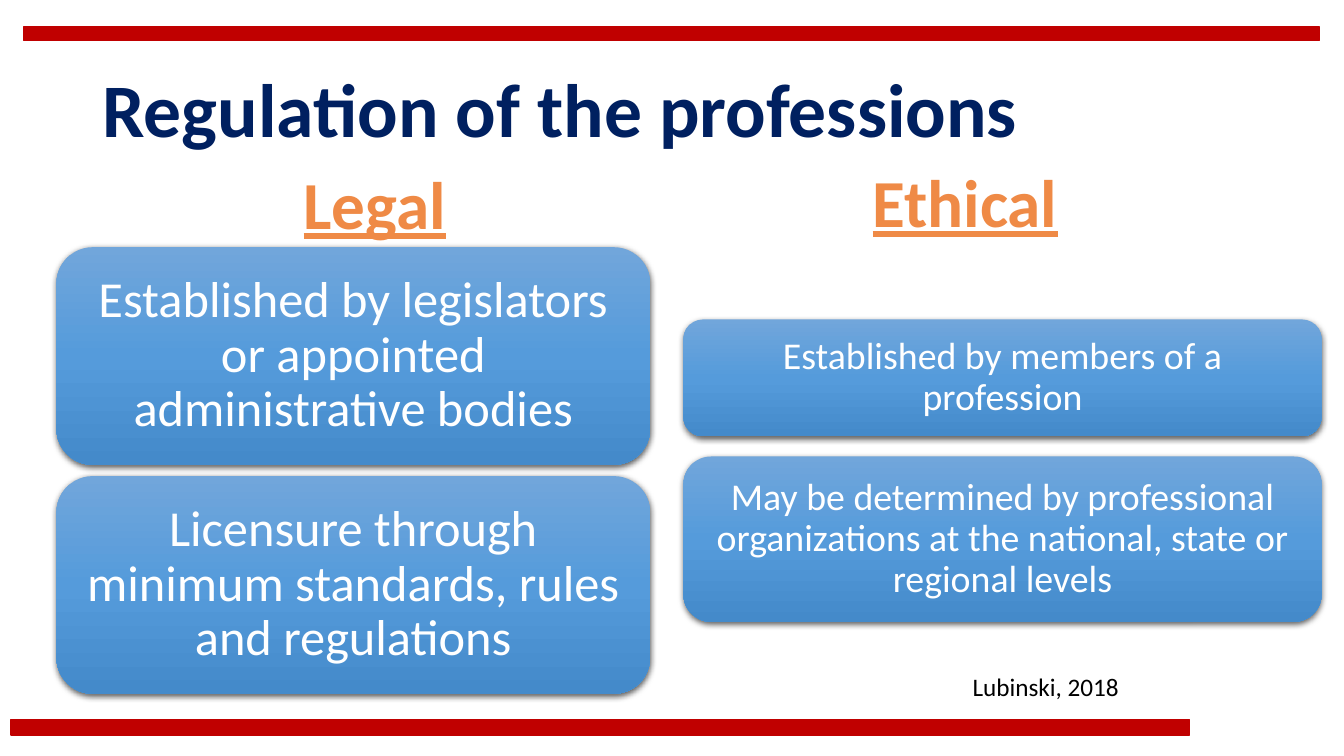
from copy import deepcopy

from lxml import etree
from pptx import Presentation
from pptx import util as u
from pptx.dml.color import RGBColor
from pptx.enum import shapes, text
from pptx.oxml.ns import qn

COLORS = {
    "bar": "C00000", "title": "002060", "heading": "EF8A46",
    "card_top": "71A6DB", "card_middle": "559BDB", "card_bottom": "448ACA",
    "card_text": "FFFFFF", "citation": "000000", "shadow": "000000",
}
TITLE = "Regulation of the professions"
CITATION = "Lubinski, 2018"
BARS = [(7.9, 514.1, 841.7, 10.8), (16.6, 19.4, 925.9, 9.4)]
COLUMNS = [
    {
        "heading": "Legal", "heading_box": (64.8, 115.9, 406.1, 64.8),
        "left": 40.3, "top": 176.6, "width": 424.1, "gap": 8,
        "size": 36, "inset": 10.8,
        "cards": [
            ("Established by legislators or appointed administrative bodies", 155.5),
            ("Licensure through minimum standards, rules and regulations", 155.5),
        ],
    },
    {
        "heading": "Ethical", "heading_box": (485.3, 114.5, 408.2, 64.8),
        "left": 488.2, "top": 228.2, "width": 455.8, "gap": 14.4,
        "size": 27, "inset": 8.1,
        "cards": [
            ("Established by members of a profession", 83.5),
            ("May be determined by professional organizations at the national, "
             "state or regional levels", 118.1),
        ],
    },
]


def color(name):
    return RGBColor.from_string(COLORS[name])


def points(box):
    return [u.Pt(value) for value in box]


def write(shape, words, size, color_name, align, bold=False, underline=False,
          spacing=0.9, anchor=text.MSO_ANCHOR.MIDDLE):
    frame = shape.text_frame
    frame.word_wrap = True
    frame.auto_size = text.MSO_AUTO_SIZE.NONE
    frame.vertical_anchor = anchor
    paragraph = frame.paragraphs[0]
    paragraph.alignment = align
    paragraph.line_spacing = spacing
    run = paragraph.add_run()
    run.text = words
    run.font.name = "Calibri"
    run.font.size = u.Pt(size)
    run.font.bold = bold
    run.font.underline = underline
    run.font.color.rgb = color(color_name)


def add_bar(slide, box):
    bar = slide.shapes.add_shape(shapes.MSO_SHAPE.RECTANGLE, *points(box))
    bar.shadow.inherit = False
    bar.fill.solid()
    bar.fill.fore_color.rgb = color("bar")
    bar.line.color.rgb = color("bar")
    bar.line.width = u.Pt(1)


def fill_gradient(shape):
    shape.fill.gradient()
    shape.fill.gradient_angle = 270
    stop_list = shape._element.spPr.find(".//" + qn("a:gsLst"))
    stop_list.append(deepcopy(stop_list[-1]))
    names = ("card_top", "card_middle", "card_bottom")
    for index, (stop, name) in enumerate(zip(shape.fill.gradient_stops, names)):
        stop.position = index / 2
        stop.color.rgb = color(name)


def add_shadow(shape):
    shape.shadow.inherit = False
    effects = shape._element.spPr.find(qn("a:effectLst"))
    shadow = etree.SubElement(
        effects, qn("a:outerShdw"), blurRad=str(u.Pt(4.5)), dist=str(u.Pt(1.5)),
        dir="5400000", algn="ctr", rotWithShape="0")
    tint = etree.SubElement(shadow, qn("a:srgbClr"), val=COLORS["shadow"])
    etree.SubElement(tint, qn("a:alpha"), val="63000")


def add_card(slide, box, words, size, inset):
    card = slide.shapes.add_shape(shapes.MSO_SHAPE.ROUNDED_RECTANGLE, *points(box))
    fill_gradient(card)
    card.line.fill.background()
    add_shadow(card)
    frame = card.text_frame
    frame.margin_left = frame.margin_right = u.Pt(inset)
    frame.margin_top = frame.margin_bottom = u.Pt(inset)
    write(card, words, size, "card_text", text.PP_ALIGN.CENTER)


def add_column(slide, column):
    heading = slide.shapes.add_textbox(*points(column["heading_box"]))
    write(heading, column["heading"], 48, "heading", text.PP_ALIGN.CENTER,
          bold=True, underline=True)
    top = column["top"]
    for words, height in column["cards"]:
        box = (column["left"], top, column["width"], height)
        add_card(slide, box, words, column["size"], column["inset"])
        top += height + column["gap"]


def main():
    presentation = Presentation()
    presentation.slide_width = u.Pt(960)
    presentation.slide_height = u.Pt(540)
    slide = presentation.slides.add_slide(presentation.slide_layouts[5])

    title = slide.shapes.title
    title.left, title.top, title.width, title.height = points((66, 28.75, 828, 104.4))
    write(title, TITLE, 54, "title", text.PP_ALIGN.LEFT, bold=True)

    for box in BARS:
        add_bar(slide, box)
    for column in COLUMNS:
        add_column(slide, column)

    citation = slide.shapes.add_textbox(*points((687.6, 475.9, 152.6, 28.8)))
    write(citation, CITATION, 18, "citation", text.PP_ALIGN.LEFT,
          spacing=1.0, anchor=text.MSO_ANCHOR.TOP)
    presentation.save("out.pptx")


if __name__ == "__main__":
    main()
